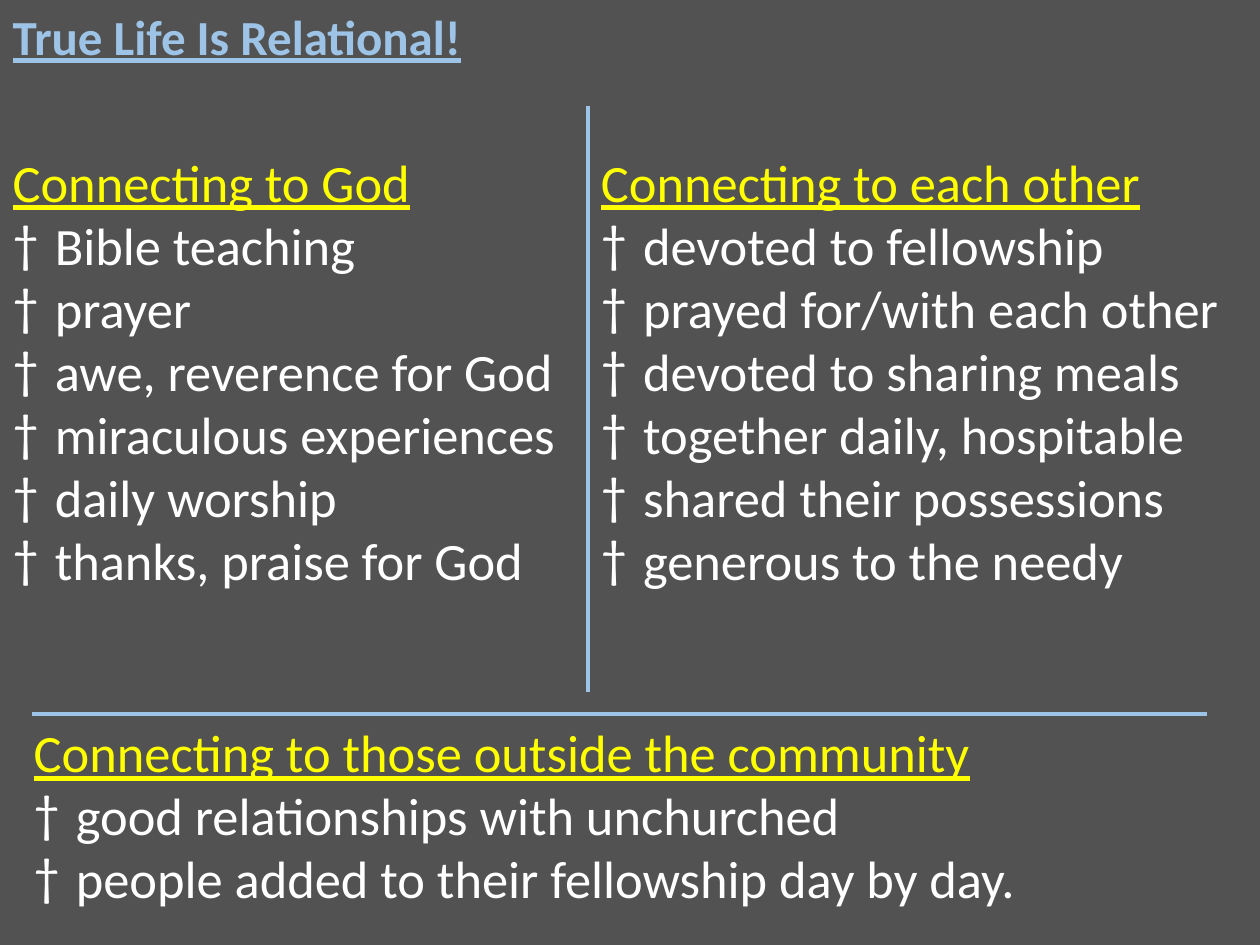
from lxml.etree import SubElement
from pptx import Presentation
from pptx.dml.color import RGBColor
from pptx.enum.shapes import MSO_CONNECTOR as LineType
from pptx.enum.text import MSO_ANCHOR as Anchor, MSO_AUTO_SIZE as Fit, PP_ALIGN as Align
from pptx.oxml.ns import qn
from pptx.util import Cm, Pt

BACK, BLUE, GOLD, WHITE = "525252", "9DC3E6", "FFFF00", "FFFFFF"

TITLE = "True Life Is Relational!"
LISTS = [
    ("Connecting to God", [
        "Bible teaching", "prayer", "awe, reverence for God",
        "miraculous experiences", "daily worship", "thanks, praise for God"]),
    ("Connecting to each other", [
        "devoted to fellowship", "prayed for/with each other",
        "devoted to sharing meals", "together daily, hospitable",
        "shared their possessions", "generous to the needy"]),
    ("Connecting to those outside the community", [
        "good relationships with unchurched",
        "people added to their fellowship day by day."]),
]

# Layout in cm: the two rules split the page into three areas
WIDE, HIGH = 25.4, 19.05
MID, BASE, TOP = 11.86, 14.4, 2.9
AREAS = [
    (0, TOP, 12.14, 9.25),
    (MID, TOP, WIDE - MID, 9.25),
    (0.43, BASE, 21.8, 4.11),
]
RULES = [(MID, 2.13, MID, 13.94), (0.64, BASE, 24.33, BASE)]
INDENT = 0.85


def color(code):
    return RGBColor.from_string(code)


def place(shape, area):
    """Move a text shape and give its frame the common format."""
    for name, size in zip(("left", "top", "width", "height"), area):
        setattr(shape, name, Cm(size))
    frame = shape.text_frame
    look = {"word_wrap": True, "auto_size": Fit.NONE, "vertical_anchor": Anchor.TOP}
    for name, value in look.items():
        setattr(frame, name, value)
    return frame


def write(par, text, size, code, mark=None, **style):
    """Fill a paragraph; mark is its bullet sign, if any."""
    par.text = text
    look = {"alignment": Align.LEFT, "space_before": Pt(0), "line_spacing": 1.0}
    for name, value in look.items():
        setattr(par, name, value)
    font = par.runs[0].font
    font.color.rgb = color(code)
    look = {"name": "Calibri", "size": Pt(size), "bold": False, **style}
    for name, value in look.items():
        setattr(font, name, value)
    props = par._p.get_or_add_pPr()
    step = Cm(INDENT) if mark else 0
    props.set("marL", str(step))
    props.set("indent", str(-step))
    if mark:
        SubElement(props, qn("a:buFont")).set("typeface", "Calibri")
        SubElement(props, qn("a:buChar")).set("char", mark)
    else:
        SubElement(props, qn("a:buNone"))


def add_rule(slide, ends):
    line = slide.shapes.add_connector(LineType.STRAIGHT, *map(Cm, ends))
    line.line.color.rgb = color(BLUE)
    line.line.width = Pt(2.25)
    SubElement(line._element.spPr, qn("a:effectLst"))


def main():
    deck = Presentation()
    deck.slide_width, deck.slide_height = Cm(WIDE), Cm(HIGH)
    slide = deck.slides.add_slide(deck.slide_layouts.get_by_name("Two Content"))
    fill = slide.background.fill
    fill.solid()
    fill.fore_color.rgb = color(BACK)

    head = place(slide.shapes.title, (0, 0, 24.56, 1.45))
    write(head.paragraphs[0], TITLE, 28, BLUE, bold=True, underline=True)

    left, right = list(slide.placeholders)[1:3]
    foot = slide.shapes.add_textbox(0, 0, 0, 0)
    for shape, area, (name, items) in zip((left, right, foot), AREAS, LISTS):
        frame = place(shape, area)
        write(frame.paragraphs[0], name, 30, GOLD, underline=True)
        for item in items:
            write(frame.add_paragraph(), item, 30, WHITE, mark="†")

    for ends in RULES:
        add_rule(slide, ends)
    deck.save("out.pptx")


if __name__ == "__main__":
    main()
